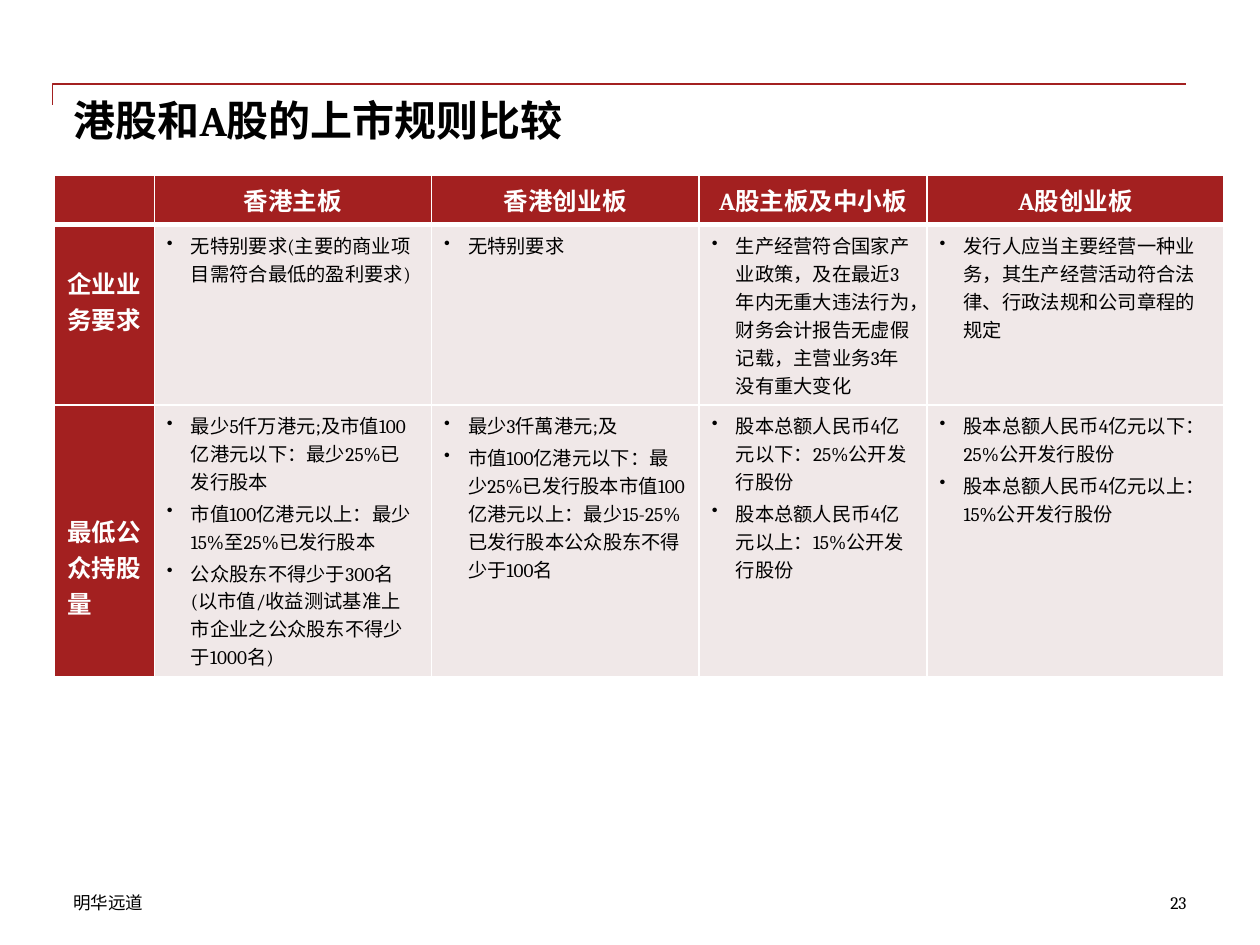
from pptx import Presentation
from pptx.dml.color import RGBColor
from pptx.enum.text import MSO_ANCHOR as Anchor, PP_ALIGN as Align
from pptx.oxml.ns import qn
from pptx.util import Inches, Pt
from lxml.etree import SubElement as Sub

RED, PALE, WHITE, BLACK = "A32020", "F0E8E8", "FFFFFF", "000000"
LATIN, HAN = "Cambria", "Noto Sans CJK SC"
TITLE_ONLY = 5

WIDTHS = [9.5, 26.4, 25.5, 21.7, 28.3]
HEIGHTS = [4.7, 17, 25.8]
HEADS = ["香港主板", "香港创业板", "A股主板及中小板", "A股创业板"]
SHARES = ["股本总额人民币4亿元以下：25%公开发行股份",
          "股本总额人民币4亿元以上：15%公开发行股份"]
# label, blank lines above the label, bullets of each board
RULES = [
    ("企业业务要求", 1, [
        ["无特别要求(主要的商业项目需符合最低的盈利要求)"],
        ["无特别要求"],
        ["生产经营符合国家产业政策，及在最近3年内无重大违法行为，"
         "财务会计报告无虚假记载，主营业务3年没有重大变化"],
        ["发行人应当主要经营一种业务，其生产经营活动符合法律、"
         "行政法规和公司章程的规定"],
    ]),
    ("最低公众持股量", 3, [
        ["最少5仟万港元;及市值100亿港元以下：最少25%已发行股本",
         "市值100亿港元以上：最少15%至25%已发行股本",
         "公众股东不得少于300名(以市值/收益测试基准上市企业之公众股东不得少于1000名)"],
        ["最少3仟萬港元;及",
         "市值100亿港元以下：最少25%已发行股本市值100亿港元以上："
         "最少15-25%已发行股本公众股东不得少于100名"],
        SHARES,
        SHARES,
    ]),
]


def color(text):
    return RGBColor.from_string(text)


def unit(count):
    """Length of grid columns or rows; the slide is 120 by 90."""
    return Inches(count / 12)


class Page:
    def __init__(self, deck):
        self.slide = deck.slides.add_slide(deck.slide_layouts[TITLE_ONLY])
        self.shapes = self.slide.shapes

    def style(self, par, size, tint=BLACK, bold=False, face=LATIN, align=Align.LEFT):
        par.alignment = align
        font = par.font
        font.name, font.size, font.bold = face, Pt(size), bold
        font.color.rgb = color(tint)

    def fill(self, shape, text, size, **look):
        """Put one line of text into a shape without margins."""
        frame = shape.text_frame
        frame.word_wrap = True
        frame.vertical_anchor = Anchor.TOP
        frame.margin_left = frame.margin_right = 0
        frame.margin_top = frame.margin_bottom = 0
        frame.text = text
        self.style(frame.paragraphs[0], size, **look)

    def title(self, text, x, y, w, h):
        shape = self.shapes.title
        shape.left, shape.top, shape.width, shape.height = map(unit, (x, y, w, h))
        self.fill(shape, text, 24, bold=True)

    def text(self, text, x, y, w, h, **look):
        box = self.shapes.add_textbox(*map(unit, (x, y, w, h)))
        self.fill(box, text, 10, **look)

    def rule(self, start, *points):
        pen = self.shapes.build_freeform(*map(unit, start))
        pen.add_line_segments([tuple(map(unit, p)) for p in points], close=False)
        line = pen.convert_to_shape()
        line.shadow.inherit = False
        line.fill.background()
        line.line.color.rgb = color(RED)
        line.line.width = Pt(1)

    def grid(self, x, y, widths, heights):
        sizes = unit(sum(widths)), unit(sum(heights))
        table = self.shapes.add_table(len(heights), len(widths), unit(x), unit(y),
                                      *sizes).table
        for col, width in zip(table.columns, widths):
            col.width = unit(width)
        for row, height in zip(table.rows, heights):
            row.height = unit(height)
        return table

    def bullet(self, par):
        props = par._p.get_or_add_pPr()
        props.set("marL", str(Inches(0.19)))
        props.set("indent", str(-Inches(0.19)))
        Sub(props, qn("a:buSzPct"), val="90000")
        Sub(props, qn("a:buChar"), char="•")

    def border(self, cell, base):
        props = cell._tc.get_or_add_tcPr()
        for side, width in zip("LRTB", (1, 1, 1, base)):
            line = Sub(props, qn("a:ln" + side), w=str(Pt(width)))
            fill = Sub(line, qn("a:solidFill"))
            Sub(fill, qn("a:srgbClr"), val=WHITE)

    def cell(self, cell, items, fill, size, bullets=False, base=1, **look):
        self.border(cell, base)
        cell.fill.solid()
        cell.fill.fore_color.rgb = color(fill)
        cell.text = "\n".join(items)
        for par in cell.text_frame.paragraphs:
            if bullets:
                self.bullet(par)
            par.space_after = Pt(size * 0.2)
            self.style(par, size, **look)


def main():
    deck = Presentation()
    deck.slide_width, deck.slide_height = unit(120), unit(90)
    page = Page(deck)
    page.rule((5, 10), (5, 8), (113, 8))
    page.title("港股和A股的上市规则比较", 7, 9, 106, 12)

    table = page.grid(5.2, 16.7, WIDTHS, HEIGHTS)
    strong = dict(fill=RED, size=14, tint=WHITE, bold=True)
    for col, head in enumerate([""] + HEADS):
        cell = table.cell(0, col)
        cell.vertical_anchor = Anchor.MIDDLE
        page.cell(cell, [head], base=3, align=Align.CENTER, **strong)
    for row, (label, blanks, boards) in enumerate(RULES, 1):
        cell = table.cell(row, 0)
        cell.margin_top = Inches(0.05 + 0.27 * blanks)
        page.cell(cell, [label], **strong)
        for col, items in enumerate(boards, 1):
            cell = table.cell(row, col)
            if row == 1 and col < 3:
                cell.margin_right = Inches(0.04)
            page.cell(cell, items, PALE, 11, bullets=True)

    page.text("明华远道", 7, 85, 34, 2, face=HAN)
    page.text("23", 93, 85, 20, 2, align=Align.RIGHT)
    deck.save("out.pptx")


if __name__ == "__main__":
    main()
